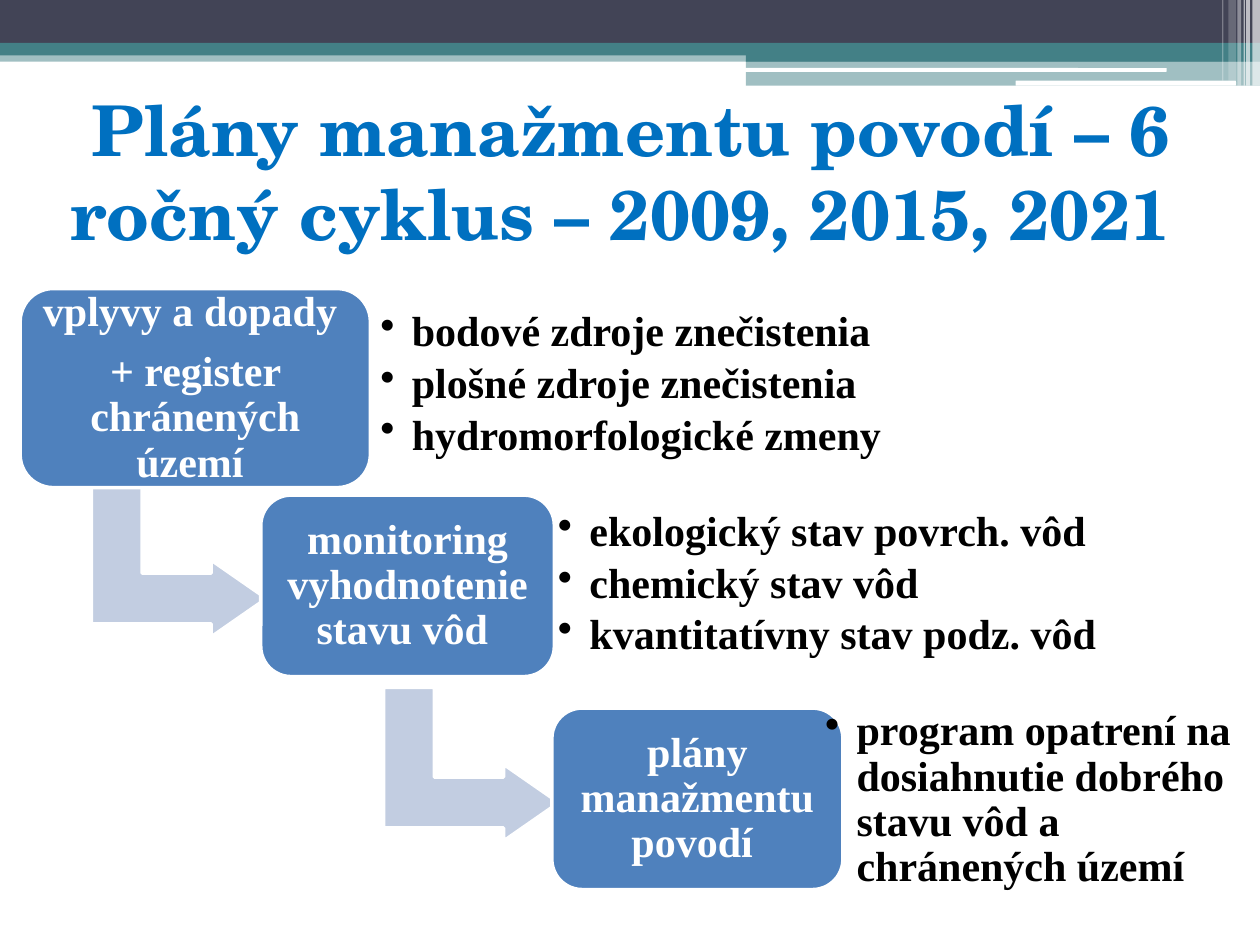
from lxml import etree
from pptx import Presentation
from pptx.dml.color import RGBColor
from pptx.enum.shapes import MSO_SHAPE
from pptx.enum.text import MSO_ANCHOR, MSO_AUTO_SIZE, PP_ALIGN
from pptx.oxml.ns import qn
from pptx.util import Emu, Pt

RECTANGLE = MSO_SHAPE.RECTANGLE
ROUNDED = MSO_SHAPE.ROUNDED_RECTANGLE
BENT_ARROW = MSO_SHAPE.BENT_UP_ARROW
MIDDLE = MSO_ANCHOR.MIDDLE
CENTER, LEFT = PP_ALIGN.CENTER, PP_ALIGN.LEFT
NO_AUTOFIT = MSO_AUTO_SIZE.NONE

PX = 9144
PAGE = (1000, 750)
INSET = 10
INDENT = 25
ARROW_SIZE = (122, 139)
ARROW_SHAPE = (0.33, 0.25, 0.36)

THEME = {
    "dark": "424456", "teal": "438086", "white": "FFFFFF", "title": "0070C0",
    "step": "4F81BD", "arrow": "C2CDE1", "black": "000000",
    "title_font": "TeX Gyre Schola", "body_font": "Times New Roman",
    "title_size": 40, "body_size": 24, "outline": 2,
}

TITLE = "Plány manažmentu povodí – 6 ročný cyklus – 2009, 2015, 2021 "
TITLE_FRAME = (20, 60, 961, 150)

BANDS = [
    ((0, 40, 1000, 9), "teal", 50),
    ((0, 0, 1000, 34), "dark", 100),
    ((0, 34, 1000, 10), "teal", 100),
    ((592, 39, 408, 10), "teal", 100),
    ((592, 48, 408, 20), "teal", 50),
]
HIGHLIGHTS = [(591, 54, 335, 3), (806, 64, 175, 4)]
STRIPES = [
    (994, 6, 68, 65), (989, 3, 68, 65), (987, 1, 68, 60),
    (982, 3, 68, 40), (975, 6, 64, 20), (970, 1, 64, 30),
]

STEPS = [
    {
        "frame": (16, 229, 278, 158),
        "label": ["vplyvy a dopady ", "+ register chránených území "],
        "list_frame": (292, 239, 428, 133),
        "points": ["bodové zdroje znečistenia", "plošné zdroje znečistenia",
                   "hydromorfologické zmeny"],
        "arrow": (81, 375),
    },
    {
        "frame": (207, 393, 233, 144),
        "label": ["monitoring vyhodnotenie stavu vôd "],
        "list_frame": (433, 399, 472, 130),
        "points": ["ekologický stav povrch. vôd", "chemický stav vôd",
                   "kvantitatívny stav podz. vôd"],
        "arrow": (313, 537),
    },
    {
        "frame": (438, 562, 231, 144),
        "label": ["plány manažmentu povodí "],
        "list_frame": (645, 565, 344, 140),
        "points": ["program opatrení na dosiahnutie dobrého stavu vôd a "
                   "chránených území"],
        "arrow": None,
    },
]


def color(name):
    return RGBColor.from_string(THEME[name])


def emu(lengths):
    return [Emu(length * PX) for length in lengths]


def apply(target, values):
    for name, value in values.items():
        setattr(target, name, value)


def add_shape(page, kind, frame, fill, alpha=100, outline=None):
    shape = page.shapes.add_shape(kind, *emu(frame))
    shape.shadow.inherit = False
    shape.fill.solid()
    shape.fill.fore_color.rgb = color(fill)
    if alpha < 100:
        tint = shape.fill._xPr.find(qn("a:solidFill"))[0]
        etree.SubElement(tint, qn("a:alpha"), val=str(alpha * 1000))
    if outline:
        shape.line.color.rgb = color(outline)
        shape.line.width = Pt(THEME["outline"])
    else:
        shape.line.fill.background()
    return shape


def add_bullet(para):
    properties = para._p.get_or_add_pPr()
    properties.set("marL", str(INDENT * PX))
    properties.set("indent", str(-INDENT * PX))
    etree.SubElement(properties, qn("a:buChar"), char="•")


def write(box, lines, ink, align, space, bulleted=False):
    frame = box.text_frame
    margins = ("margin_left", "margin_top", "margin_right", "margin_bottom")
    apply(frame, {margin: Emu(INSET * PX) for margin in margins})
    apply(frame, {"word_wrap": True, "auto_size": NO_AUTOFIT,
                  "vertical_anchor": MIDDLE})
    for index, line in enumerate(lines):
        para = frame.add_paragraph() if index else frame.paragraphs[0]
        apply(para, {"alignment": align, "line_spacing": 0.9,
                     "space_after": Pt(space * THEME["body_size"])})
        if bulleted:
            add_bullet(para)
        span = para.add_run()
        span.text = line
        apply(span.font, {"name": THEME["body_font"], "bold": True,
                          "size": Pt(THEME["body_size"])})
        span.font.color.rgb = color(ink)


def add_header(page):
    for frame, fill, alpha in BANDS:
        add_shape(page, RECTANGLE, frame, fill, alpha)
    for frame in HIGHLIGHTS:
        add_shape(page, ROUNDED, frame, "white")
    for left, width, height, alpha in STRIPES:
        add_shape(page, RECTANGLE, (left, 0, width, height), "white", alpha)


def add_title(page):
    title = page.shapes.title
    apply(title, dict(zip(("left", "top", "width", "height"), emu(TITLE_FRAME))))
    title.text_frame.text = TITLE
    apply(title.text_frame, {"word_wrap": True, "auto_size": NO_AUTOFIT,
                             "vertical_anchor": MIDDLE})
    para = title.text_frame.paragraphs[0]
    para.alignment = CENTER
    span = para.runs[0]
    apply(span.font, {"name": THEME["title_font"], "bold": True,
                      "size": Pt(THEME["title_size"])})
    span.font.color.rgb = color("title")


def add_step(page, step):
    if step["arrow"]:
        arrow = add_shape(page, BENT_ARROW, step["arrow"] + ARROW_SIZE,
                          "arrow", outline="white")
        arrow.rotation = 90
        for index, value in enumerate(ARROW_SHAPE):
            arrow.adjustments[index] = value
    box = add_shape(page, ROUNDED, step["frame"], "step", outline="white")
    write(box, step["label"], "white", CENTER, 0.35)
    points = page.shapes.add_textbox(*emu(step["list_frame"]))
    write(points, step["points"], "black", LEFT, 0.15, bulleted=True)


def main():
    deck = Presentation()
    deck.slide_width, deck.slide_height = emu(PAGE)
    page = deck.slides.add_slide(deck.slide_layouts.get_by_name("Title Only"))
    add_header(page)
    add_title(page)
    for step in STEPS:
        add_step(page, step)
    deck.save("out.pptx")


if __name__ == "__main__":
    main()
